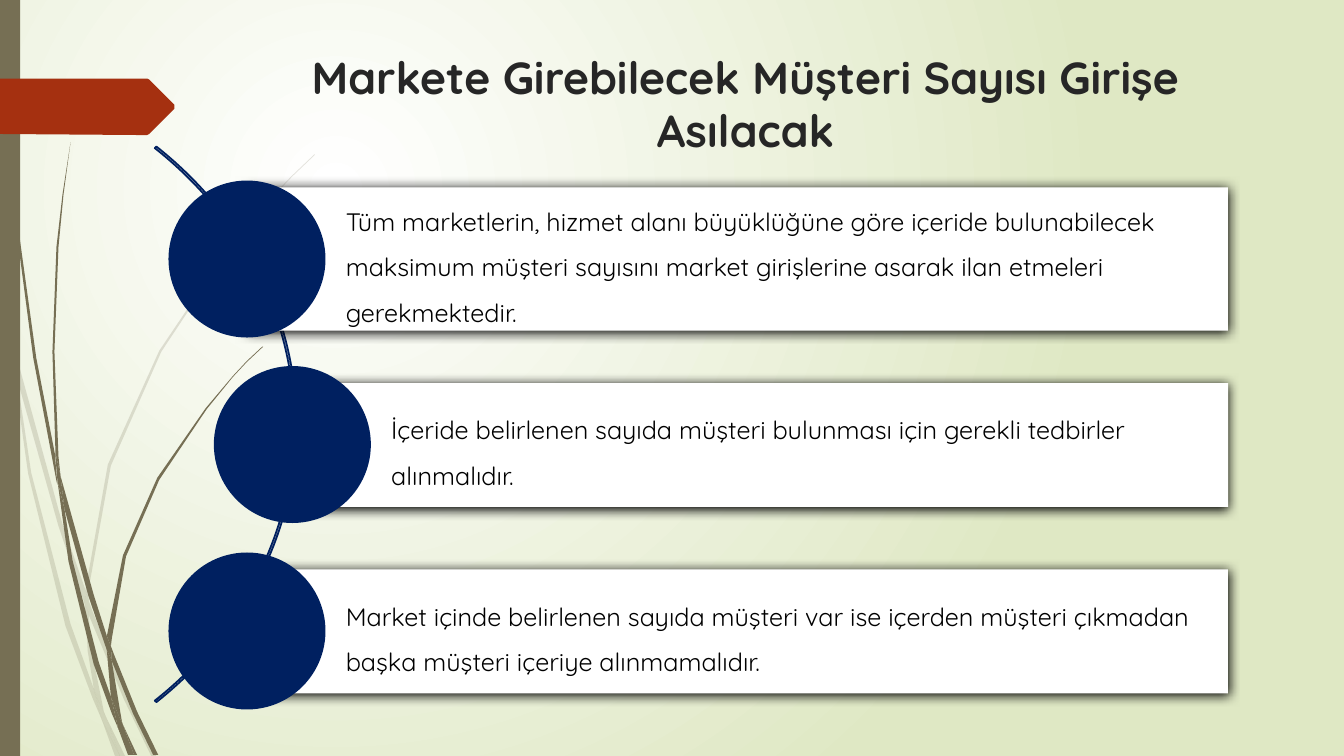
from lxml.etree import SubElement
from pptx import Presentation
from pptx.dml.color import RGBColor
from pptx.enum.shapes import MSO_SHAPE
from pptx.enum.text import MSO_ANCHOR, PP_ALIGN
from pptx.oxml.ns import qn
from pptx.util import Emu, Pt
from dataclasses import dataclass

PX = 9144  # 100 px to the inch


@dataclass(frozen=True)
class Theme:
    font: str = "Quicksand"
    title_size: int = 32
    body_size: int = 18
    line_width: float = 1.25
    glow: str = "FFFFFF"
    ground: str = "DFE8C4"
    stem: str = "766F54"
    tag: str = "A53010"
    navy: str = "002060"
    panel: str = "FFFFFF"
    title: str = "262626"
    body: str = "000000"


THEME = Theme()

PALE_STEMS = [
    [(11, 350), (9, 322), (0, 282), (0, 299), (10, 344)],
    [(58, 522), (84, 599), (85, 586), (62, 520), (14, 345), (17, 376)],
    [(92, 607), (88, 596), (88, 610), (123, 694), (150, 750), (155, 750), (127, 692)],
    [(119, 750), (124, 750), (105, 711)],
    [(93, 683), (70, 619), (31, 469), (17, 376), (11, 350), (28, 470), (65, 621),
     (92, 693), (101, 714), (99, 707)],
    [(84, 599), (87, 646), (93, 683), (96, 692), (105, 711), (103, 706), (91, 646),
     (88, 610), (88, 608)],
    [(88, 584), (110, 462), (160, 349), (229, 245), (268, 198), (290, 175), (312, 154),
     (312, 153), (289, 175), (268, 197), (228, 244), (158, 348), (107, 461), (85, 584),
     (85, 586), (88, 596)],
    [(101, 714), (114, 750), (119, 750)],
    [(88, 608), (88, 610), (88, 596), (85, 586), (84, 599)],
    [(96, 692), (93, 683), (99, 707), (101, 714), (119, 750), (105, 711)],
]
DARK_STEMS = [
    [(7, 110), (17, 233), (33, 355), (56, 477), (57, 481), (55, 457), (55, 453),
     (36, 355), (19, 232), (8, 109), (5, 48), (4, 0), (3, 0), (4, 48)],
    [(88, 592), (106, 645), (106, 631), (93, 590), (60, 472), (64, 505)],
    [(113, 649), (110, 641), (111, 656), (132, 708), (152, 749), (157, 749), (136, 706)],
    [(110, 691), (98, 657), (72, 556), (64, 505), (57, 477), (68, 557), (93, 659),
     (111, 708), (117, 722), (116, 717)],
    [(60, 472), (58, 453), (54, 349), (58, 245), (63, 193), (70, 141), (62, 193),
     (56, 245), (52, 349), (55, 449)],
    [(133, 749), (136, 749), (122, 719)],
    [(57, 477), (64, 505), (60, 472), (55, 449), (55, 453)],
    [(111, 633), (125, 552), (158, 476), (205, 406), (231, 374), (245, 359), (261, 344),
     (260, 344), (245, 358), (231, 373), (204, 405), (156, 474), (122, 551), (106, 631),
     (110, 641)],
    [(117, 722), (127, 749), (131, 749)],
    [(106, 645), (110, 691), (116, 706), (122, 719), (121, 716), (111, 656), (109, 651)],
    [(106, 645), (109, 651), (111, 656), (110, 641), (106, 631)],
    [(116, 706), (110, 691), (116, 717), (117, 722), (130, 749), (133, 749), (122, 719)],
]
TAG = [(173, 108), (148, 133), (146, 134), (136, 134), (0, 133), (0, 78), (146, 78),
       (148, 79), (173, 104)]

TITLE = "Markete Girebilecek Müşteri Sayısı Girişe Asılacak"
# Panel box, then its text
RULES = [
    ((245, 186, 973, 142),
     "Tüm marketlerin, hizmet alanı büyüklüğüne göre içeride bulunabilecek maksimum "
     "müşteri sayısını market girişlerine asarak ilan etmeleri gerekmektedir."),
    ((290, 380, 928, 123),
     "İçeride belirlenen sayıda müşteri bulunması için gerekli tedbirler alınmalıdır."),
    ((245, 565, 973, 123),
     "Market içinde belirlenen sayıda müşteri var ise içerden müşteri çıkmadan başka "
     "müşteri içeriye alınmamalıdır."),
]


def rgb(color):
    return RGBColor.from_string(color)


def emu(box):
    return [Emu(v * PX) for v in box]


def paint(sp, fill=None, line=None):
    sp.shadow.inherit = False
    if fill:
        sp.fill.solid()
        sp.fill.fore_color.rgb = rgb(fill)
    else:
        sp.fill.background()
    if line:
        sp.line.color.rgb = rgb(line)
        sp.line.width = Pt(THEME.line_width)
    else:
        sp.line.fill.background()


def add_preset(s, kind, box, fill=None, line=None):
    sp = s.shapes.add_shape(kind, *emu(box))
    paint(sp, fill, line)
    return sp


def add_outline(s, points, fill, opacity=100):
    builder = s.shapes.build_freeform(*points[0], scale=PX)
    builder.add_line_segments(points[1:], close=True)
    sp = builder.convert_to_shape()
    paint(sp, fill)
    if opacity < 100:
        color = sp.element.spPr.find(qn("a:solidFill"))[0]
        SubElement(color, qn("a:alpha"), val=str(opacity * 1000))


def cast_shadow(sp):
    effects = sp.element.spPr.find(qn("a:effectLst"))
    shadow = SubElement(effects, qn("a:outerShdw"), blurRad=str(Pt(8.5)), dist=str(Pt(1)),
                        dir="5400000", algn="ctr", rotWithShape="0")
    SubElement(shadow, qn("a:srgbClr"), val="000000")


def write(sp, text, size, color, align, anchor, bold=False):
    tf = sp.text_frame
    tf.word_wrap = True
    tf.vertical_anchor = anchor
    p = tf.paragraphs[0]
    p.text = text
    p.alignment = align
    p.font.name = THEME.font
    p.font.size = Pt(size)
    p.font.bold = bold
    p.font.color.rgb = rgb(color)
    return tf


def draw_background(s):
    """Radial gradient whose bright centre lies in the upper left."""
    fill = s.background.fill
    fill.gradient()
    for stop, color in zip(fill.gradient_stops, (THEME.glow, THEME.ground)):
        stop.color.rgb = rgb(color)
    grad = s.element.find(".//" + qn("a:gradFill"))
    grad.remove(grad.find(qn("a:lin")))
    circle = SubElement(grad, qn("a:path"), path="circle")
    SubElement(circle, qn("a:fillToRect"), l="50000", t="50000", r="100000", b="100000")


def draw_side_decor(s, bar):
    for stems, opacity in ((PALE_STEMS, 20), (DARK_STEMS, 100)):
        for points in stems:
            add_outline(s, points, THEME.stem, opacity)
    add_preset(s, MSO_SHAPE.RECTANGLE, bar, THEME.stem)
    add_outline(s, TAG, THEME.tag)


def draw_title(s, box):
    write(s.shapes.add_textbox(*emu(box)), TITLE, THEME.title_size, THEME.title,
          PP_ALIGN.CENTER, MSO_ANCHOR.TOP, bold=True)


def draw_arc(s, box):
    arc = add_preset(s, MSO_SHAPE.BLOCK_ARC, box, line=THEME.navy)
    for i, value in enumerate((189, 27, 0.003)):
        arc.adjustments[i] = value


def draw_rule(s, box, text, disc=154):
    """White text panel with a disc centred on its left edge."""
    x, y, w, h = box
    panel = add_preset(s, MSO_SHAPE.RECTANGLE, box, THEME.panel)
    cast_shadow(panel)
    tf = write(panel, text, THEME.body_size, THEME.body, PP_ALIGN.LEFT, MSO_ANCHOR.MIDDLE)
    tf.margin_left, tf.margin_top, tf.margin_right, tf.margin_bottom = emu((98, 5, 5, 5))
    tf.paragraphs[0].line_spacing = 1.5
    tf.paragraphs[0].space_after = Pt(6.3)
    disc_box = (x - disc // 2, y + (h - disc) // 2, disc, disc)
    add_preset(s, MSO_SHAPE.OVAL, disc_box, THEME.navy, THEME.navy)


def main():
    prs = Presentation()
    prs.slide_width, prs.slide_height = emu((1333, 750))
    s = prs.slides.add_slide(prs.slide_layouts[6])
    draw_background(s)
    draw_side_decor(s, (0, 0, 20, 750))
    draw_title(s, (252, 44, 975, 140))
    draw_arc(s, (-535, 52, 829, 738))
    for box, text in RULES:
        draw_rule(s, box, text)
    prs.save("out.pptx")


if __name__ == "__main__":
    main()
